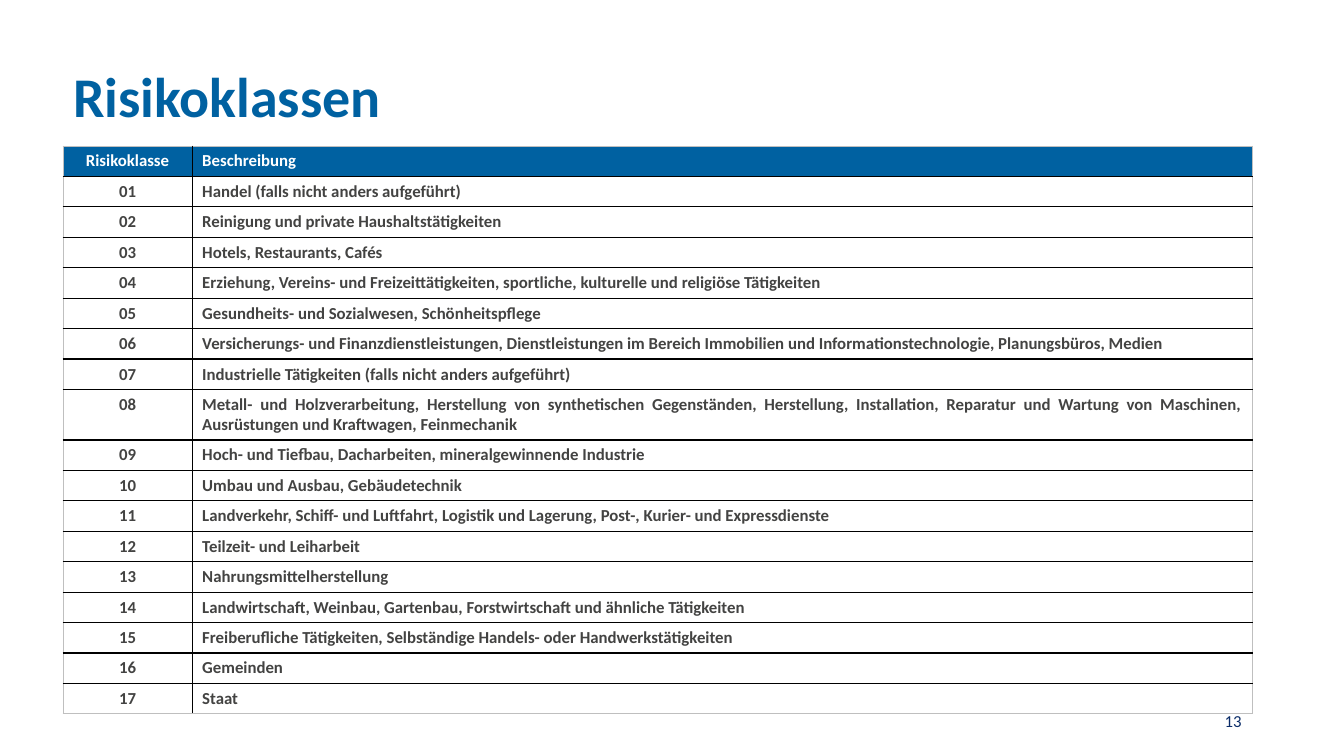
from pptx import Presentation
from pptx.dml.color import RGBColor
from pptx.enum.text import MSO_ANCHOR, MSO_AUTO_SIZE, PP_ALIGN
from pptx.util import Pt
from lxml.etree import SubElement
from pptx.oxml.ns import qn

# Content
TITLE = "Risikoklassen"
PAGE = "13"
HEAD = ("Risikoklasse", "Beschreibung")
RISKS = [
    "Handel (falls nicht anders aufgeführt)",
    "Reinigung und private Haushaltstätigkeiten",
    "Hotels, Restaurants, Cafés",
    "Erziehung, Vereins- und Freizeittätigkeiten, sportliche, kulturelle und religiöse Tätigkeiten",
    "Gesundheits- und Sozialwesen, Schönheitspflege",
    "Versicherungs- und Finanzdienstleistungen, Dienstleistungen im Bereich Immobilien und "
    "Informationstechnologie, Planungsbüros, Medien",
    "Industrielle Tätigkeiten (falls nicht anders aufgeführt)",
    "Metall- und Holzverarbeitung, Herstellung von synthetischen Gegenständen, Herstellung, "
    "Installation, Reparatur und Wartung von Maschinen, Ausrüstungen und Kraftwagen, Feinmechanik",
    "Hoch- und Tiefbau, Dacharbeiten, mineralgewinnende Industrie",
    "Umbau und Ausbau, Gebäudetechnik",
    "Landverkehr, Schiff- und Luftfahrt, Logistik und Lagerung, Post-, Kurier- und Expressdienste",
    "Teilzeit- und Leiharbeit",
    "Nahrungsmittelherstellung",
    "Landwirtschaft, Weinbau, Gartenbau, Forstwirtschaft und ähnliche Tätigkeiten",
    "Freiberufliche Tätigkeiten, Selbständige Handels- oder Handwerkstätigkeiten",
    "Gemeinden",
    "Staat",
]
JUSTIFY_FROM = 8

# Layout in px, 96 to the inch
PX = 9525
SLIDE = (1280, 720)
TITLE_BOX = (60, 41, 1104, 107)
PAGE_BOX = (904, 667, 288, 38)
TABLE_AT = (60, 139)
COLS = (123, 1010)
ROW = 29

FONT = "Calibri"
BLUE = RGBColor(0x00, 0x61, 0xA1)
NAVY = RGBColor(0x0C, 0x2D, 0x69)
GREY = RGBColor(0x43, 0x43, 0x42)
WHITE = RGBColor(0xFF, 0xFF, 0xFF)
BLACK = RGBColor(0x00, 0x00, 0x00)
SILVER = RGBColor(0xBF, 0xBF, 0xBF)


def emu(*sizes):
    return [size * PX for size in sizes]


def write(frame, text, size, color, align, bold=False):
    para = frame.paragraphs[0]
    para.alignment = align
    run = para.add_run()
    run.text = text
    font = run.font
    font.name, font.size, font.bold = FONT, Pt(size), bold
    font.color.rgb = color
    return para


def border(cell, side, color, width):
    line = SubElement(cell._tc.get_or_add_tcPr(), qn("a:ln" + side), w=str(Pt(width)))
    fill = SubElement(line, qn("a:solidFill"))
    SubElement(fill, qn("a:srgbClr"), val=str(color))


def main():
    deck = Presentation()
    deck.slide_width, deck.slide_height = emu(*SLIDE)
    slide = deck.slides.add_slide(deck.slide_layouts[5])

    # Title
    title = slide.shapes.title
    title.left, title.top, title.width, title.height = emu(*TITLE_BOX)
    title.text_frame.auto_size = MSO_AUTO_SIZE.NONE
    title.text_frame.vertical_anchor = MSO_ANCHOR.MIDDLE
    para = write(title.text_frame, TITLE, 40, BLUE, PP_ALIGN.LEFT, True)
    para.line_spacing = 0.9

    # Page number
    page = slide.shapes.add_textbox(*emu(*PAGE_BOX)).text_frame
    page.word_wrap = True
    page.vertical_anchor = MSO_ANCHOR.MIDDLE
    write(page, PAGE, 12, NAVY, PP_ALIGN.RIGHT)

    # Table of risk classes
    rows = [HEAD] + [(f"{num:02}", risk) for num, risk in enumerate(RISKS, 1)]
    last = len(rows) - 1
    table = slide.shapes.add_table(
        len(rows), len(COLS), *emu(*TABLE_AT, sum(COLS), ROW * len(rows))).table
    table.horz_banding = table.first_row = False
    for col, width in zip(table.columns, COLS):
        col.width = width * PX
    for r, texts in enumerate(rows):
        table.rows[r].height = ROW * PX
        for c, text in enumerate(texts):
            cell = table.cell(r, c)
            outer = {"L": c == 0, "R": c == 1, "T": r == 0, "B": r == last}
            for side, edge in outer.items():
                border(cell, side, SILVER if edge else BLACK, 0.75 if edge else 1)
            if r == 0:
                cell.fill.solid()
                cell.fill.fore_color.rgb = BLUE
            else:
                cell.fill.background()
            if c == 0:
                align = PP_ALIGN.CENTER
            else:
                align = PP_ALIGN.JUSTIFY if r >= JUSTIFY_FROM else PP_ALIGN.LEFT
            write(cell.text_frame, text, 12, GREY if r else WHITE, align, True)

    deck.save("out.pptx")


if __name__ == "__main__":
    main()
